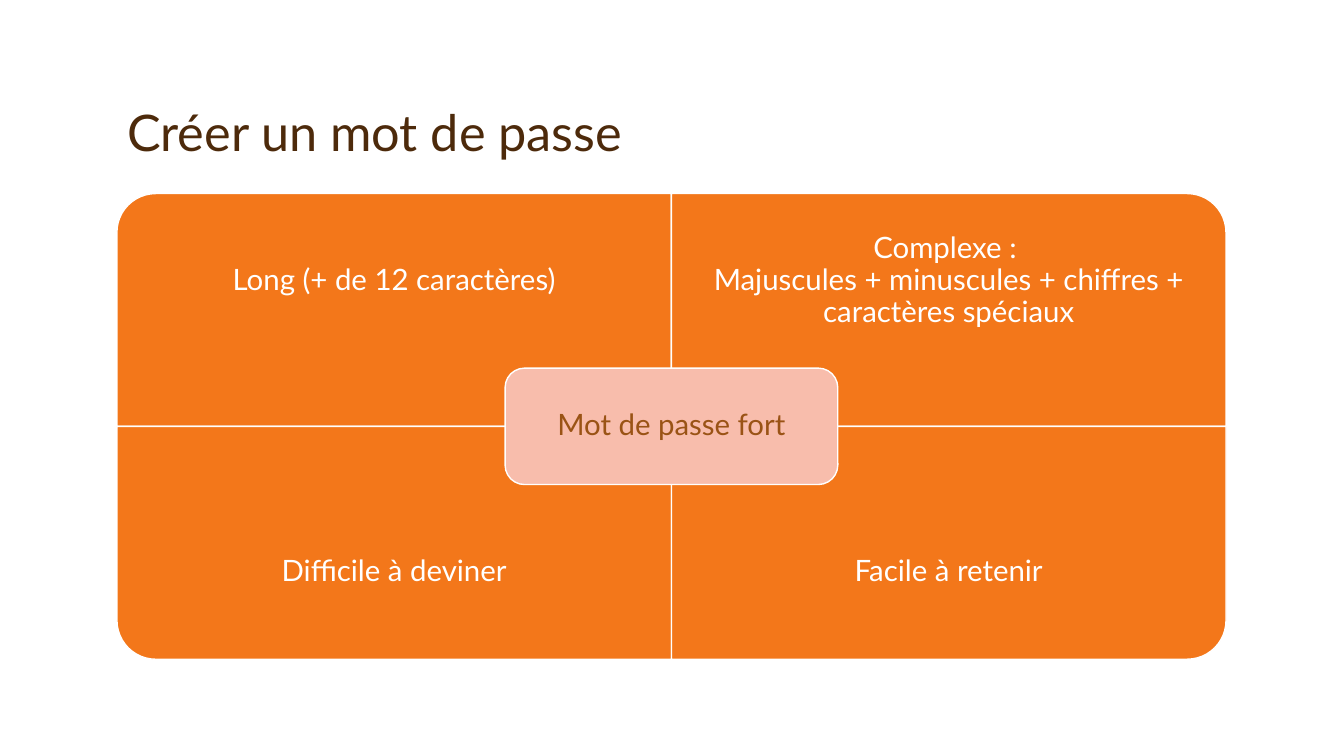
from pptx import Presentation
from pptx import util as u
from pptx.dml.color import RGBColor
from pptx.enum import shapes, text

HUES = {"title": "4D2A0B", "tile": "F3771A", "edge": "FFFFFF",
        "core": "F8BDAC", "dark": "9A5315"}
FONT = "Lato"

# Grid: two columns by two rows, in inches
LEFT, TOP, COL, ROW = 1.16, 1.92, 5.5, 2.31
MIDX, MIDY = LEFT + COL, TOP + ROW

# Column, row, rotation, wording
TILES = [
    (0, 0, 270, "Long (+ de 12 caractères)"),
    (1, 0, 0, "Complexe : \vMajuscules + minuscules + chiffres + caractères spéciaux"),
    (0, 1, 180, "Difficile à deviner"),
    (1, 1, 90, "Facile à retenir"),
]


def hue(name):
    return RGBColor.from_string(HUES[name])


def write(frame, words, size, color, align, anchor):
    frame.word_wrap = True
    frame.auto_size = text.MSO_AUTO_SIZE.NONE
    frame.vertical_anchor = anchor
    para = frame.paragraphs[0]
    para.alignment = align
    para.line_spacing = 0.9
    for i, part in enumerate(words.split("\v")):
        if i:
            para.add_line_break()
        run = para.add_run()
        run.text = part
        run.font.name = FONT
        run.font.size = u.Pt(size)
        run.font.color.rgb = hue(color)


def add_head(slide, words):
    head = slide.shapes.title
    head.left, head.top = u.Inches(LEFT), u.Inches(0.33)
    head.width, head.height = u.Inches(2 * COL), u.Inches(1.33)
    write(head.text_frame, words, 36, "title",
          text.PP_ALIGN.LEFT, text.MSO_ANCHOR.BOTTOM)


def add_block(group, kind, midx, midy, wide, high, fill, turn=0):
    """Draw a filled outline around its centre."""
    block = group.shapes.add_shape(
        kind, u.Inches(midx - wide / 2), u.Inches(midy - high / 2),
        u.Inches(wide), u.Inches(high))
    block.rotation = turn
    block.shadow.inherit = False
    block.fill.solid()
    block.fill.fore_color.rgb = hue(fill)
    block.line.color.rgb = hue("edge")
    block.line.width = u.Pt(1)


def add_label(group, left, top, wide, high, words, color, inset):
    box = group.shapes.add_textbox(*map(u.Inches, (left, top, wide, high)))
    frame = box.text_frame
    frame.margin_left = frame.margin_right = u.Inches(inset)
    frame.margin_top = frame.margin_bottom = u.Inches(inset)
    write(frame, words, 21, color,
          text.PP_ALIGN.CENTER, text.MSO_ANCHOR.MIDDLE)


def add_tile(group, col, row, turn, words):
    left, top = LEFT + col * COL, TOP + row * ROW
    # A quarter turn swaps width and height
    wide, high = (ROW, COL) if turn % 180 else (COL, ROW)
    add_block(group, shapes.MSO_SHAPE.ROUND_1_RECTANGLE,
              left + COL / 2, top + ROW / 2, wide, high, "tile", turn)
    # The label fills the outer three quarters of the tile
    add_label(group, left, top + row * ROW / 4, COL, ROW * 3 / 4,
              words, "edge", 0.16)


def add_core(group, words):
    wide, high = COL * 0.6, ROW / 2
    add_block(group, shapes.MSO_SHAPE.ROUNDED_RECTANGLE,
              MIDX, MIDY, wide, high, "core")
    add_label(group, MIDX - wide / 2, MIDY - high / 2, wide, high,
              words, "dark", 0.15)


def main():
    deck = Presentation()
    deck.slide_width, deck.slide_height = u.Inches(13.33), u.Inches(7.5)
    slide = deck.slides.add_slide(deck.slide_layouts[5])
    add_head(slide, "Créer un mot de passe")
    # Matrix with its central idea
    group = slide.shapes.add_group_shape()
    for tile in TILES:
        add_tile(group, *tile)
    add_core(group, "Mot de passe fort")
    deck.save("out.pptx")


if __name__ == "__main__":
    main()
